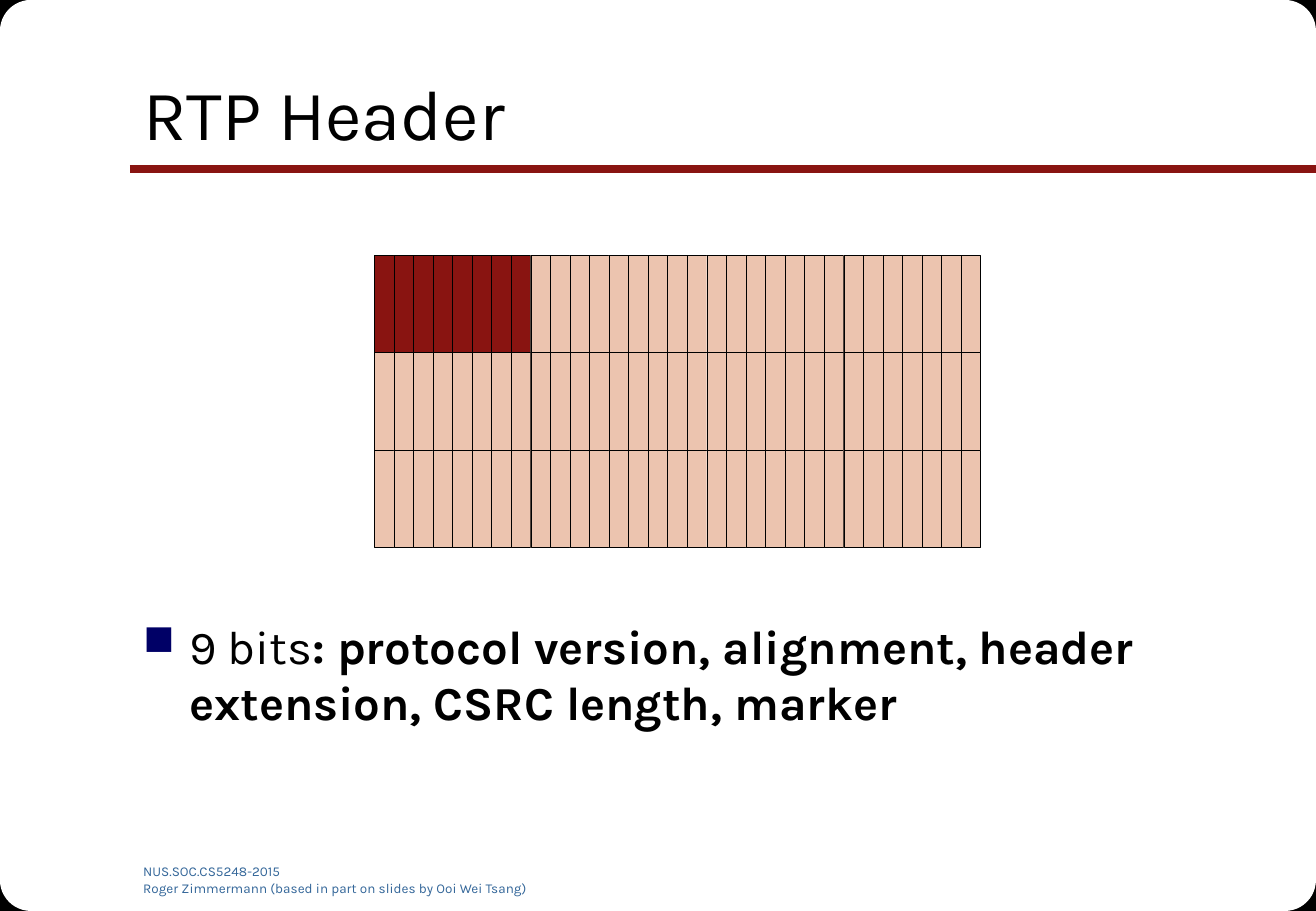
from itertools import product

from lxml import etree
from pptx import Presentation
from pptx.dml.color import RGBColor
from pptx.enum.shapes import MSO_CONNECTOR, MSO_SHAPE
from pptx.enum.text import MSO_ANCHOR
from pptx.oxml.ns import qn
from pptx.util import Inches, Pt

RECT = MSO_SHAPE.RECTANGLE
ROUND = MSO_SHAPE.ROUNDED_RECTANGLE
LINE = MSO_CONNECTOR.STRAIGHT
TOP, MIDDLE = MSO_ANCHOR.TOP, MSO_ANCHOR.MIDDLE

FONT = "Karla"
WIDE, HIGH = 10.83, 7.5
COLORS = {
    "black": "000000", "white": "FFFFFF", "red": "891411",
    "pink": "ECC4AF", "navy": "000066", "blue": "336699",
}


def color(name):
    return RGBColor.from_string(COLORS[name])


def add_box(slide, kind, box, fill, line=None):
    shape = slide.shapes.add_shape(kind, *map(Inches, box))
    shape.shadow.inherit = False
    shape.fill.solid()
    shape.fill.fore_color.rgb = color(fill)
    if line:
        shape.line.color.rgb = color("black")
        shape.line.width = Pt(line)
    else:
        shape.line.fill.background()
    return shape


def add_text(slide, box, lines, size, fill, anchor=TOP):
    """Each line is a list of (text, bold) runs."""
    frame = slide.shapes.add_textbox(*map(Inches, box)).text_frame
    frame.word_wrap = True
    frame.vertical_anchor = anchor
    for i, runs in enumerate(lines):
        para = frame.add_paragraph() if i else frame.paragraphs[0]
        para.font.name = FONT
        para.font.size = Pt(size)
        para.font.color.rgb = color(fill)
        for text, bold in runs:
            run = para.add_run()
            run.text = text
            if bold:
                run.font.bold = True
    return frame


def add_frame(slide, box):
    """Black corners under rounded white ones."""
    left, top, width, height = box
    layers = [(RECT, 0.47, 0.44, "black", 0.75),
              (ROUND, 1.66, 1.53, "white", None)]
    for kind, w, h, fill, line in layers:
        for x, y in product((left, left + width - w),
                            (top, top + height - h)):
            add_box(slide, kind, (x, y, w, h), fill, line)


def add_title(slide, box, text):
    left, top, width, height = box
    y = Inches(top + 1.09)
    rule = slide.shapes.add_connector(
        LINE, Inches(left - 0.01), y, Inches(WIDE), y)
    rule.line.color.rgb = color("red")
    rule.line.width = Pt(4.5)
    etree.SubElement(rule._element.spPr, qn("a:effectLst"))
    add_text(slide, box, [[(text, False)]], 42, "black", MIDDLE)


def add_bits(slide, box, rows, cols, used):
    """Grid of bits; the first ones of the top row are marked as used."""
    left, top, width, height = box
    w, h = width / cols, height / rows
    for row, col in product(range(rows), range(cols)):
        fill = "red" if row == 0 and col < used else "pink"
        add_box(slide, RECT, (left + col * w, top + row * h, w, h),
                fill, 0.25)


def add_point(slide, box, runs):
    frame = add_text(slide, box, [runs], 28, "black")
    props = frame.paragraphs[0]._p.get_or_add_pPr()
    props.set("marL", str(Inches(0.38)))
    props.set("indent", str(-Inches(0.38)))
    marks = [etree.Element(qn("a:buClr")),
             etree.Element(qn("a:buSzPct"), val="90000"),
             etree.Element(qn("a:buChar"), char="■")]
    etree.SubElement(marks[0], qn("a:srgbClr"), val=COLORS["navy"])
    for i, mark in enumerate(marks):
        props.insert(i, mark)


def main():
    deck = Presentation()
    deck.slide_width, deck.slide_height = Inches(WIDE), Inches(HIGH)
    slide = deck.slides.add_slide(deck.slide_layouts[6])

    # Frame, footer and title
    add_frame(slide, (0, 0, WIDE, HIGH))
    add_text(slide, (1.08, 7.06, 4.2, 0.28), [
        [("NUS.SOC.CS5248-2015", False)],
        [("Roger Zimmermann (based in part on slides by Ooi Wei Tsang)",
          False)],
    ], 8, "blue")
    add_title(slide, (1.08, 0.3, 9.21, 1.25), "RTP Header")

    # Header bits and what they hold
    add_bits(slide, (3.08, 2.1, 4.99, 2.41), rows=3, cols=31, used=8)
    add_point(slide, (1.08, 5.03, 9.21, 1.67), [
        ("9 bits", False),
        (": protocol version, alignment, header extension, "
         "CSRC length, marker", True),
    ])

    deck.save("out.pptx")


if __name__ == "__main__":
    main()
